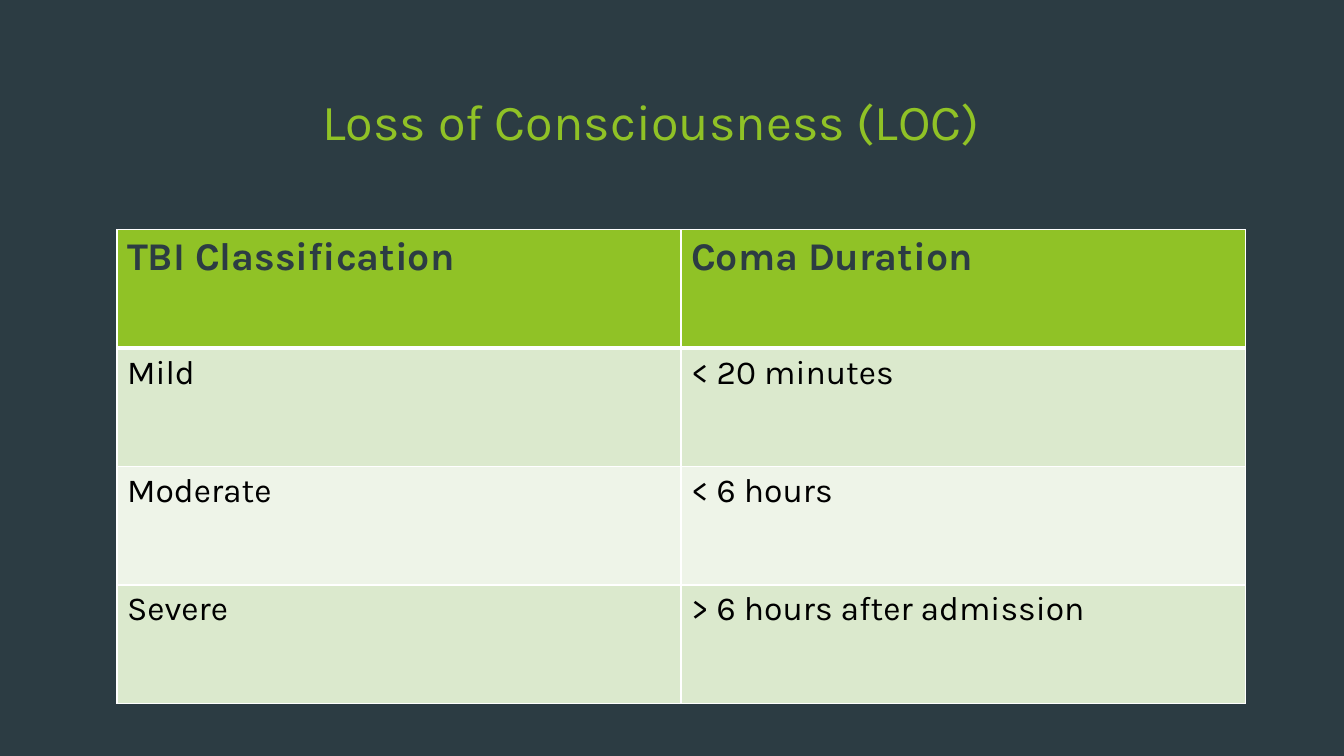
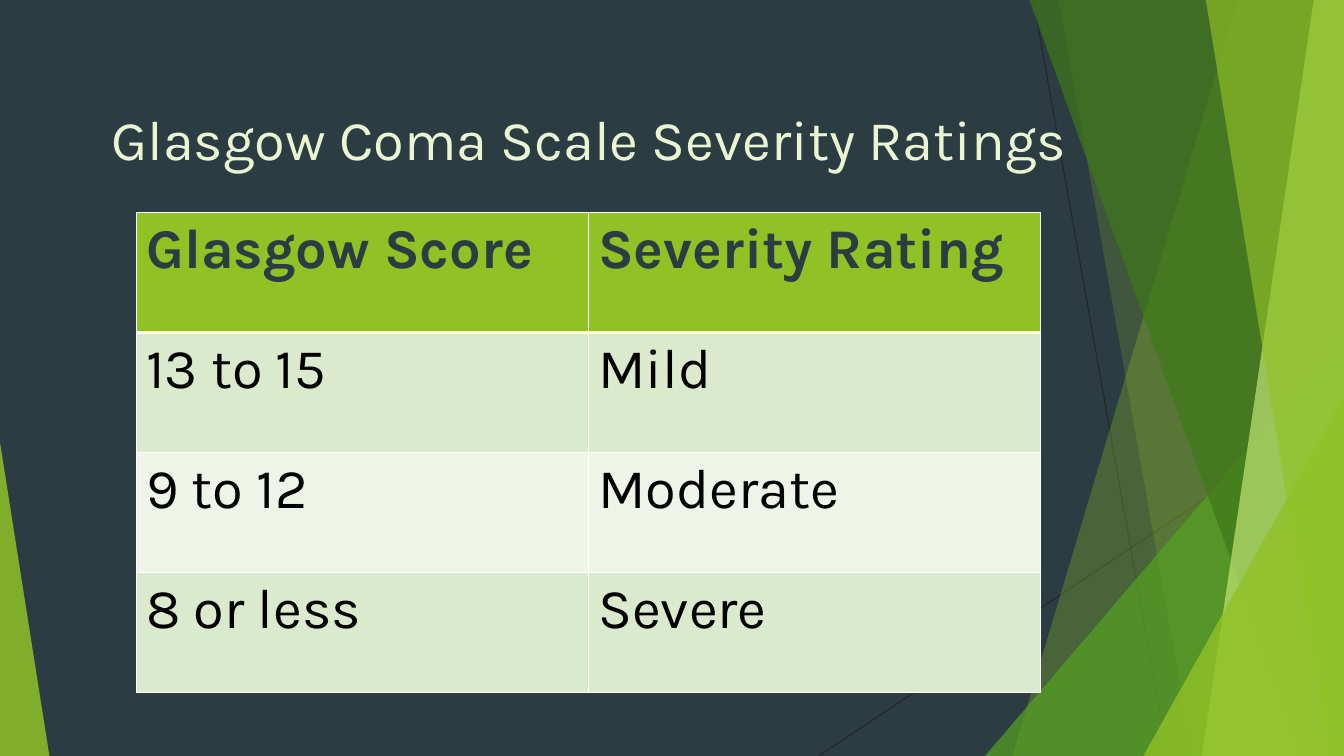
"""Build two slides of severity tables for traumatic brain injury."""
from dataclasses import dataclass

from lxml import etree
from pptx import Presentation
from pptx import util as u
from pptx.dml.color import RGBColor
from pptx.enum import shapes, text
from pptx.oxml.ns import qn

FONT = "Karla"
SLATE = RGBColor(0x2C, 0x3C, 0x43)
LIME = RGBColor(0x90, 0xC2, 0x26)
GREEN = RGBColor(0x54, 0xA0, 0x21)
FOREST = RGBColor(0x3F, 0x78, 0x19)
PALE_LIME = RGBColor(0xC0, 0xE4, 0x74)
CREAM = RGBColor(0xEA, 0xF6, 0xD1)
BAND_DARK = RGBColor(0xDB, 0xE9, 0xCD)
BAND_LIGHT = RGBColor(0xEE, 0xF4, 0xE8)
WHITE = RGBColor(0xFF, 0xFF, 0xFF)
BLACK = RGBColor(0, 0, 0)
CHARCOAL = RGBColor(0x26, 0x26, 0x26)

WIDTH, HEIGHT = 13.33, 7.5


@dataclass(frozen=True)
class Box:
    left: float
    top: float
    width: float
    height: float

    def lengths(self) -> list[u.Length]:
        return [u.Inches(v) for v in (self.left, self.top, self.width, self.height)]


@dataclass(frozen=True)
class Line:
    start: tuple[float, float]
    end: tuple[float, float]


@dataclass(frozen=True)
class Facet:
    """A full-height panel that runs to the right edge of the slide."""
    top_x: float
    bottom_x: float
    color: RGBColor
    opacity: int


@dataclass(frozen=True)
class Corner:
    """A triangle in a lower corner, with its peak on the slide edge."""
    box: Box
    peak: float
    color: RGBColor
    opacity: int


@dataclass(frozen=True)
class Title:
    wording: str
    box: Box
    size: int
    color: RGBColor


@dataclass(frozen=True)
class Grid:
    box: Box
    head_size: int
    body_size: int
    rows: list[tuple[str, str]]


DECOR = [
    Line((10.25, 0), (11.58, HEIGHT)),
    Line((WIDTH, 4.03), (8.12, HEIGHT)),
    Facet(12.28, 10.04, LIME, 30),
    Facet(10.5, 11.83, LIME, 20),
    Corner(Box(9.77, 3.33, 3.56, 4.17), 1, GREEN, 72),
    Facet(10.21, 12.91, FOREST, 70),
    Facet(13.03, 11.92, PALE_LIME, 70),
    Facet(11.96, 13.18, LIME, 65),
    Corner(Box(11.34, 3.93, 1.99, 3.57), 1, LIME, 80),
    Corner(Box(0, 4.39, 0.49, 3.11), 0, LIME, 85),
]


def paint(sp, color: RGBColor, opacity: int) -> None:
    """Give a shape a flat translucent fill with no outline or shadow."""
    sp.shadow.inherit = False
    sp.line.fill.background()
    sp.fill.solid()
    sp.fill.fore_color.rgb = color
    clr = sp._element.spPr.find(qn("a:solidFill")).find(qn("a:srgbClr"))
    etree.SubElement(clr, qn("a:alpha")).set("val", str(opacity * 1000))


def add_line(s, line: Line) -> None:
    """Draw a thin dark line."""
    ends = [u.Inches(v) for v in (*line.start, *line.end)]
    cxn = s.shapes.add_connector(shapes.MSO_CONNECTOR.STRAIGHT, *ends)
    cxn.line.color.rgb = CHARCOAL
    cxn.line.width = u.Pt(0.75)
    etree.SubElement(cxn._element.spPr, qn("a:effectLst"))


def add_facet(s, facet: Facet) -> None:
    """Draw a slanted panel."""
    points = [(facet.top_x, 0), (WIDTH, 0), (WIDTH, HEIGHT), (facet.bottom_x, HEIGHT)]
    first, *rest = [(u.Inches(x), u.Inches(y)) for x, y in points]
    builder = s.shapes.build_freeform(*first)
    builder.add_line_segments(rest, close=True)
    paint(builder.convert_to_shape(), facet.color, facet.opacity)


def add_corner(s, corner: Corner) -> None:
    """Draw a corner triangle."""
    sp = s.shapes.add_shape(shapes.MSO_SHAPE.ISOSCELES_TRIANGLE, *corner.box.lengths())
    sp.adjustments[0] = corner.peak
    paint(sp, corner.color, corner.opacity)


def add_decor(s) -> None:
    """Draw the faceted green backdrop."""
    draw = {Line: add_line, Facet: add_facet, Corner: add_corner}
    for item in DECOR:
        draw[type(item)](s, item)


def add_run(p, wording: str, size: int, color: RGBColor, bold: bool = False) -> None:
    """Add one formatted run to a paragraph."""
    r = p.add_run()
    r.text = wording
    r.font.name = FONT
    r.font.size = u.Pt(size)
    r.font.bold = bold
    r.font.color.rgb = color


def set_title(s, title: Title) -> None:
    """Place the title placeholder in front of the backdrop and fill it."""
    sp = s.shapes.title
    s.shapes._spTree.append(sp._element)
    sp.left, sp.top, sp.width, sp.height = title.box.lengths()
    tf = sp.text_frame
    tf.word_wrap = True
    tf.auto_size = text.MSO_AUTO_SIZE.NONE
    tf.vertical_anchor = text.MSO_ANCHOR.TOP
    p = tf.paragraphs[0]
    p.alignment = text.PP_ALIGN.CENTER
    add_run(p, title.wording, title.size, title.color)


def set_borders(cell, top: int, bottom: int) -> None:
    """Give a cell white borders, with widths in points."""
    tc_pr = cell._tc.get_or_add_tcPr()
    for side, width in (("L", 1), ("R", 1), ("T", top), ("B", bottom)):
        ln = etree.SubElement(tc_pr, qn(f"a:ln{side}"), w=str(u.Pt(width)))
        fill = etree.SubElement(ln, qn("a:solidFill"))
        etree.SubElement(fill, qn("a:srgbClr"), val=str(WHITE))


def add_grid(s, grid: Grid) -> None:
    """Draw a table with a lime header and banded rows."""
    n_rows, n_cols = len(grid.rows), len(grid.rows[0])
    table = s.shapes.add_table(n_rows, n_cols, *grid.box.lengths()).table
    table.horz_banding = False
    for row in table.rows:
        row.height = u.Inches(grid.box.height / n_rows)
    for i, wordings in enumerate(grid.rows):
        head = i == 0
        fill = LIME if head else BAND_DARK if i % 2 else BAND_LIGHT
        size = grid.head_size if head else grid.body_size
        for j, wording in enumerate(wordings):
            cell = table.cell(i, j)
            set_borders(cell, top=3 if i == 1 else 1, bottom=3 if head else 1)
            cell.fill.solid()
            cell.fill.fore_color.rgb = fill
            p = cell.text_frame.paragraphs[0]
            add_run(p, wording, size, SLATE if head else BLACK, head)


def add_slide(prs, title: Title, grid: Grid, decorated: bool = False) -> None:
    """Add a slide with a title and a table."""
    s = prs.slides.add_slide(prs.slide_layouts.get_by_name("Title Only"))
    if decorated:
        add_decor(s)
    set_title(s, title)
    add_grid(s, grid)


def main() -> None:
    """Build and save the presentation."""
    prs = Presentation()
    prs.slide_width, prs.slide_height = u.Inches(WIDTH), u.Inches(HEIGHT)
    background = prs.slide_master.background.fill
    background.solid()
    background.fore_color.rgb = SLATE

    add_slide(
        prs,
        Title("Loss of Consciousness (LOC)", Box(1.76, 0.84, 9.4, 1.44), 36, LIME),
        Grid(Box(1.16, 2.28, 11.19, 4.7), 28, 24, [
            ("TBI Classification", "Coma Duration"),
            ("Mild", "< 20 minutes"),
            ("Moderate", "< 6 hours"),
            ("Severe", "> 6 hours after admission"),
        ]),
    )
    add_slide(
        prs,
        Title("Glasgow Coma Scale Severity Ratings", Box(0.74, 0.99, 10.2, 1.12), 40, CREAM),
        Grid(Box(1.35, 2.11, 8.97, 4.76), 40, 40, [
            ("Glasgow Score", "Severity Rating"),
            ("13 to 15", "Mild"),
            ("9 to 12", "Moderate"),
            ("8 or less", "Severe"),
        ]),
        decorated=True,
    )
    prs.save("out.pptx")


if __name__ == "__main__":
    main()
